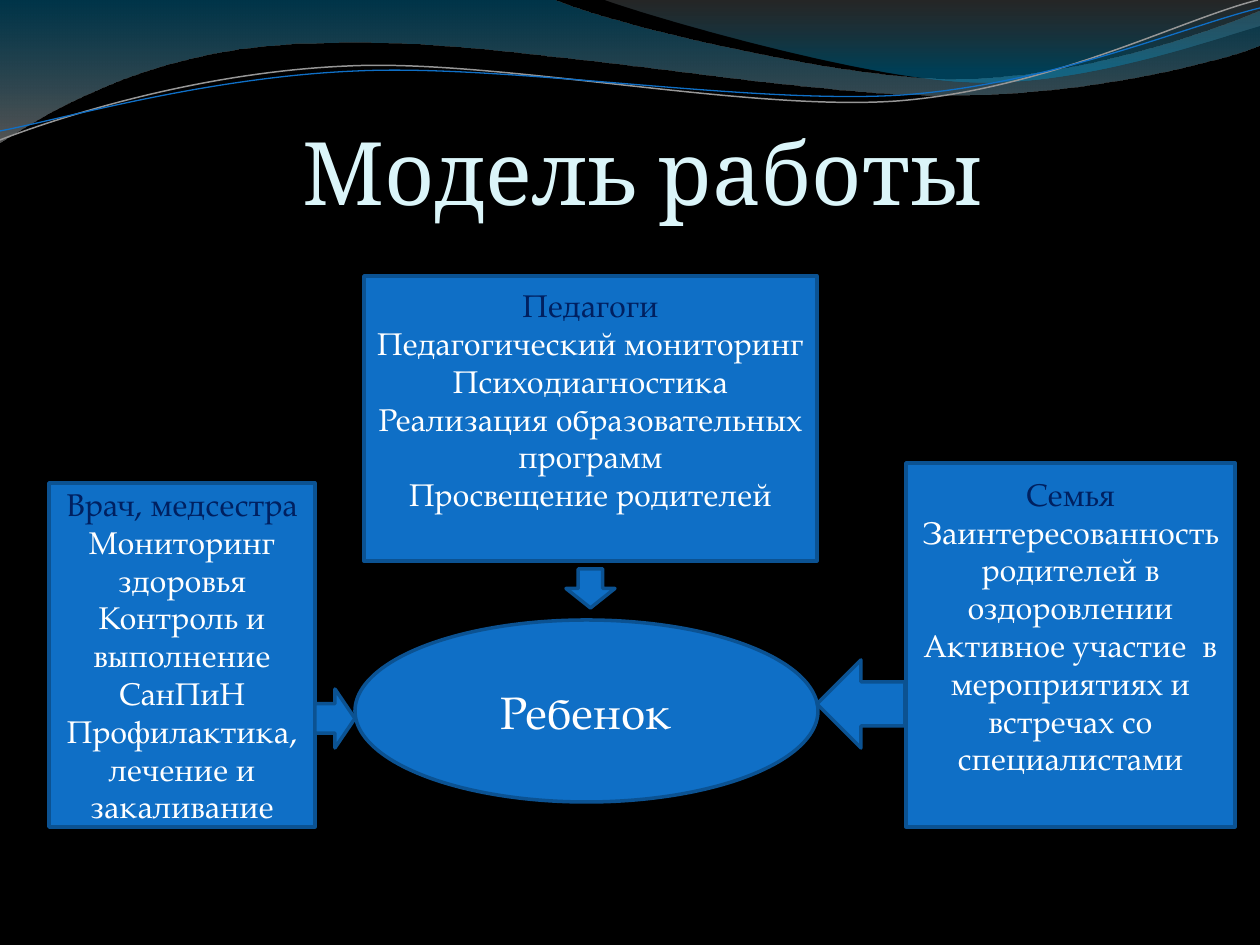
from pptx import Presentation
from pptx.dml.color import RGBColor as RGB
from pptx.enum.shapes import MSO_SHAPE as SHAPE
from pptx.enum.text import MSO_ANCHOR as ANCHOR, PP_ALIGN as ALIGN
from pptx.oxml.ns import qn
from pptx.util import Pt
from lxml.etree import SubElement

PX = 7257.14  # EMU in one px, 126 px to the inch
W, H = 1260, 945

THEME = {
    "bg": "000000", "fill": "0F6FC6", "edge": "0B5292", "edge_pt": 2,
    "title": {"name": "Cambria", "size": 50, "color": "DBF5F9"},
    "heading": {"name": "TeX Gyre Pagella", "size": 18, "color": "002060"},
    "body": {"name": "TeX Gyre Pagella", "size": 18, "color": "FFFFFF"},
    "centre": {"name": "TeX Gyre Pagella", "size": 26, "color": "FFFFFF"},
}

TITLE = ("Модель работы", (76, 66, 1133, 157))

# Box, bottom inset, heading, items
GROUPS = [
    ((364, 276, 453, 285), 44, "Педагоги", [
        "Педагогический мониторинг", "Психодиагностика",
        "Реализация образовательных программ", "Просвещение родителей"]),
    ((49, 483, 266, 344), 6, "Врач, медсестра", [
        "Мониторинг здоровья", "Контроль и выполнение СанПиН",
        "Профилактика, лечение и закаливание"]),
    ((906, 463, 329, 364), 44, "Семья", [
        "Заинтересованность родителей в оздоровлении",
        "Активное участие  в мероприятиях и встречах со специалистами"]),
]
CHILD = ("Ребенок", (355, 620, 463, 182))
ARROWS = [
    (SHAPE.LEFT_ARROW, (817, 660, 88, 88)),
    (SHAPE.DOWN_ARROW, (566, 569, 49, 39)),
    (SHAPE.RIGHT_ARROW, (315, 689, 40, 59)),
]

# Start point, then segments: one point is a line, three points are a curve.
# Gradient stops are position, colour, opacity in percent.
BANDS = [
    ((0, 0), [
        [(554, 0)],
        [(600, 21), (837, 79), (955, 79)], [(1075, 79), (1207, 33), (1260, 11)],
        [(1260, 45)],
        [(1239, 55), (1096, 96), (940, 95)], [(784, 95), (481, 35), (324, 43)],
        [(163, 44), (58, 105), (0, 142)],
    ], [(0, "0074A1", 45), (1, "9A9A9A", 55)]),
    ((604, 0), [
        [(641, 14), (859, 78), (969, 82)], [(1079, 87), (1211, 40), (1260, 26)],
        [(1260, 0)],
    ], [(0, "7E7E7E", 30), (0.8, "008BBF", 45)]),
]
STRANDS = [
    ((0, 140), [
        [(60, 117), (199, 72), (349, 66)], [(498, 59), (747, 112), (898, 101)],
        [(1050, 89), (1182, 19), (1258, 0)],
    ], "969696", 0.85),
    ((0, 131), [
        [(59, 120), (207, 77), (357, 71)], [(508, 64), (752, 105), (903, 95)],
        [(1053, 84), (1186, 26), (1260, 8)],
    ], "0F6FC6", 0.75),
]


def emu(px):
    return round(px * PX)


def add_outline(shapes, start, segments, close):
    points = [(emu(x), emu(y)) for seg in segments for x, y in seg]
    builder = shapes.build_freeform(emu(start[0]), emu(start[1]))
    builder.add_line_segments(points, close=close)
    sp = builder.convert_to_shape()
    sp.shadow.inherit = False
    # Three lines in a row become one Bezier curve
    lines = iter(list(sp.element.spPr.iter(qn("a:lnTo"))))
    for seg in segments:
        parts = [next(lines) for _ in seg]
        if len(parts) == 3:
            first = parts[0]
            curve = first.makeelement(qn("a:cubicBezTo"))
            first.addprevious(curve)
            for part in parts:
                curve.append(part[0])
                part.getparent().remove(part)
    return sp


def add_block(shapes, kind, box):
    sp = shapes.add_shape(kind, *map(emu, box))
    sp.shadow.inherit = False
    sp.fill.solid()
    sp.fill.fore_color.rgb = RGB.from_string(THEME["fill"])
    sp.line.color.rgb = RGB.from_string(THEME["edge"])
    sp.line.width = Pt(THEME["edge_pt"])
    return sp


def write(tf, lines, insets, anchor):
    tf.word_wrap = True
    tf.vertical_anchor = anchor
    for side, px in zip(("left", "top", "right", "bottom"), insets):
        setattr(tf, f"margin_{side}", emu(px))
    for i, (text, style) in enumerate(lines):
        p = tf.paragraphs[0] if i == 0 else tf.add_paragraph()
        p.alignment = ALIGN.CENTER
        r = p.add_run()
        r.text = text
        look = THEME[style]
        for name, value in {"name": look["name"], "size": Pt(look["size"])}.items():
            setattr(r.font, name, value)
        r.font.color.rgb = RGB.from_string(look["color"])


def main():
    prs = Presentation()
    prs.slide_width, prs.slide_height = emu(W), emu(H)
    s = prs.slides.add_slide(prs.slide_layouts[5])
    s.background.fill.solid()
    s.background.fill.fore_color.rgb = RGB.from_string(THEME["bg"])

    # Waves along the top
    for start, segments, stops in BANDS:
        sp = add_outline(s.shapes, start, segments, True)
        sp.line.fill.background()
        sp.fill.gradient()
        sp.fill.gradient_angle = 270
        for stop, (position, color, _) in zip(sp.fill.gradient_stops, stops):
            stop.position = position
            stop.color.rgb = RGB.from_string(color)
        colors = list(sp.element.spPr.iter(qn("a:srgbClr")))
        for node, (_, _, opacity) in zip(colors, stops):
            SubElement(node, qn("a:alpha")).set("val", str(opacity * 1000))
    for start, segments, color, width in STRANDS:
        sp = add_outline(s.shapes, start, segments, False)
        sp.fill.background()
        sp.line.color.rgb = RGB.from_string(color)
        sp.line.width = Pt(width)

    # Title
    text, box = TITLE
    title = s.shapes.title
    title.left, title.top, title.width, title.height = map(emu, box)
    write(title.text_frame, [(text, "title")], (0, 6, 0, 0), ANCHOR.BOTTOM)

    # Groups around the child
    for box, bottom, heading, items in GROUPS:
        sp = add_block(s.shapes, SHAPE.RECTANGLE, box)
        lines = [(heading, "heading")] + [(item, "body") for item in items]
        write(sp.text_frame, lines, (10, 6, 10, bottom), ANCHOR.MIDDLE)

    # Child in the centre
    text, box = CHILD
    sp = add_block(s.shapes, SHAPE.OVAL, box)
    write(sp.text_frame, [(text, "centre")], (13, 6, 13, 6), ANCHOR.MIDDLE)

    # Arrows towards the child
    for kind, box in ARROWS:
        add_block(s.shapes, kind, box)

    prs.save("out.pptx")


if __name__ == "__main__":
    main()
